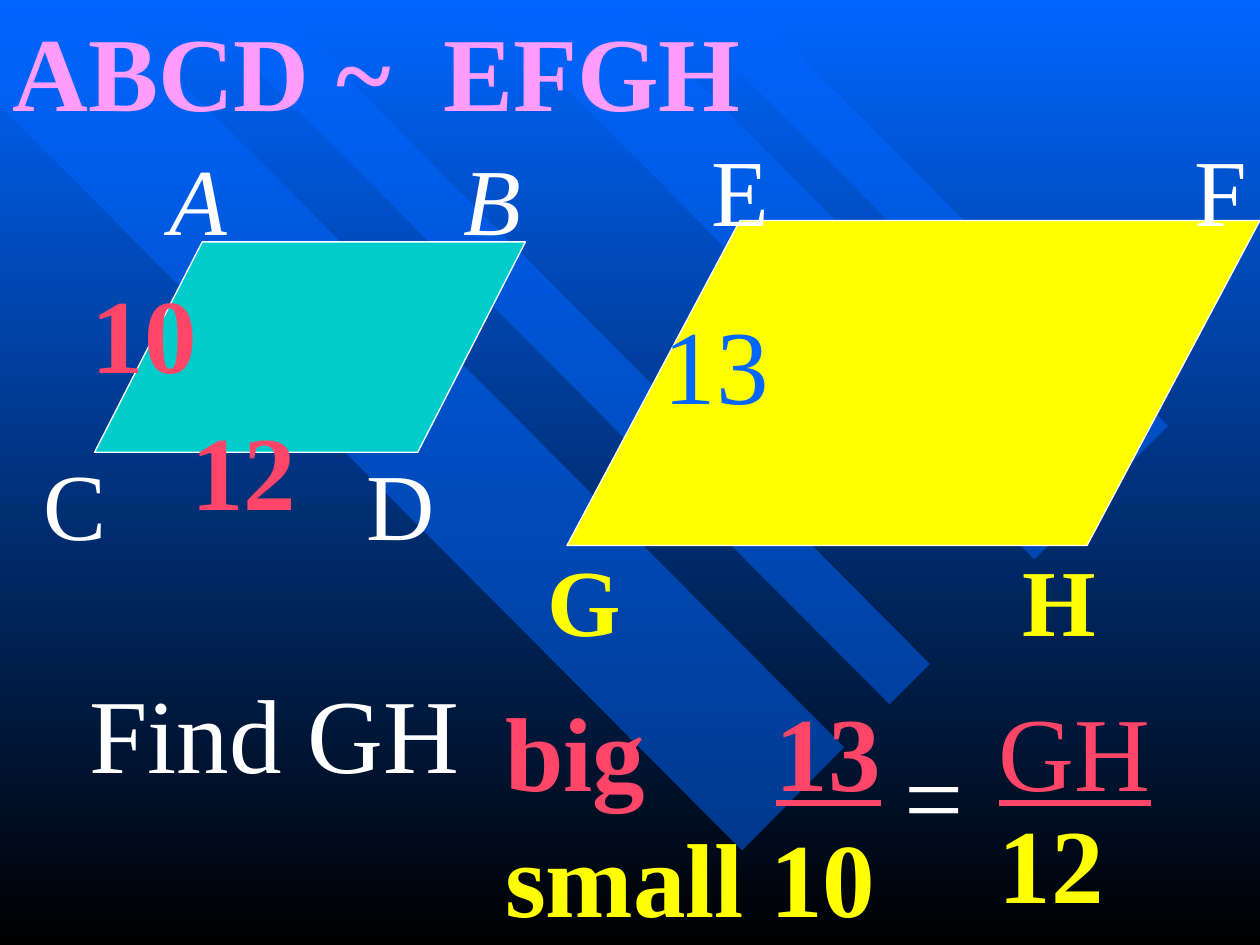
from lxml import etree
from pptx import Presentation
from pptx.dml.color import RGBColor
from pptx.enum.shapes import MSO_SHAPE
from pptx.enum.text import MSO_AUTO_SIZE
from pptx.oxml.ns import qn
from pptx.util import Inches, Pt

PARALLELOGRAM = MSO_SHAPE.PARALLELOGRAM
GROW = MSO_AUTO_SIZE.SHAPE_TO_FIT_TEXT

FONT = "Times New Roman"
WHITE, YELLOW, TEAL = "FFFFFF", "FFFF00", "00CCCC"
BLUE, BLACK, PINK, RED = "0066FF", "000000", "FF9CFC", "FF4568"

BANDS = [
    [(6.7, 5.93), (0.79, 0), (0, 0), (0, 0.84), (5.89, 6.75)],
    [(2.14, 0), (7.38, 5.27), (7.06, 5.59), (1.49, 0)],
    [(4.89, 0), (8.76, 3.89), (8.21, 4.44), (3.8, 0)],
    [(5.3, 0), (8.97, 3.68), (9.27, 3.38), (5.91, 0)],
]


def rgb(value):
    return RGBColor.from_string(value)


def add_tab(p, inches):
    tabs = etree.SubElement(p._p.get_or_add_pPr(), qn("a:tabLst"))
    etree.SubElement(tabs, qn("a:tab"), pos=str(Inches(inches)), algn="l")


def add_text(s, box, lines, size=60, tab=None):
    sp = s.shapes.add_textbox(*map(Inches, box))
    tf = sp.text_frame
    tf.word_wrap = False
    tf.auto_size = GROW
    for i, runs in enumerate(lines):
        p = tf.paragraphs[0] if i == 0 else tf.add_paragraph()
        if tab and "\t" in runs[0][0]:
            add_tab(p, tab)
        for text, color, style in runs:
            r = p.add_run()
            r.text = text
            r.font.name = FONT
            r.font.size = Pt(size)
            r.font.color.rgb = rgb(color)
            r.font.bold = "b" in style
            r.font.italic = "i" in style
            r.font.underline = "u" in style
    return tf


def add_label(s, box, text, color, style="", size=60, tab=None):
    return add_text(s, box, [[(text, color, style)]], size, tab)


def add_background(s):
    fill = s.background.fill
    fill.gradient()
    fill.gradient_angle = 270
    for stop, color, position in zip(fill.gradient_stops, (BLUE, BLACK), (0, 1)):
        stop.color.rgb = rgb(color)
        stop.position = position
    for points in BANDS:
        start, *rest = [(Inches(x), Inches(y)) for x, y in points]
        builder = s.shapes.build_freeform(*start)
        builder.add_line_segments(rest, close=True)
        sp = builder.convert_to_shape()
        sp.shadow.inherit = False
        sp.fill.solid()
        sp.fill.fore_color.rgb = rgb(BLUE)
        sp.line.fill.background()
        color = sp._element.spPr.find(".//" + qn("a:srgbClr"))
        etree.SubElement(color, qn("a:alpha"), val="50000")


def add_figure(s, box, slant, color, vertices, sides):
    x, y, w, h = box
    sp = s.shapes.add_shape(PARALLELOGRAM, *map(Inches, box))
    sp.shadow.inherit = False
    sp.adjustments[0] = slant
    sp.fill.solid()
    sp.fill.fore_color.rgb = rgb(color)
    sp.line.color.rgb = rgb(WHITE)
    sp.line.width = Pt(0.75)
    for dx, dy, width, text, ink, style, tab in vertices:
        add_label(s, (x + dx, y + dy, width, 1), text, ink, style, 54, tab)
    for dx, dy, text, ink, style in sides:
        add_label(s, (x + dx, y + dy, 1.03, 1.1), text, ink, style)


def add_proportion(s, box):
    x, y, w, h = box
    add_text(s, (x, y, 3.22, h),
             [[("big\t", RED, "b"), ("13", RED, "bu")],
              [("small 10", YELLOW, "b")]], tab=2.15)
    add_label(s, (x + 3.17, y + 0.35, 0.67, 1.1), "=", WHITE)
    tf = add_text(s, (x + 3.92, y, 1.42, 2.02),
                  [[("GH", RED, "u")], [("12", YELLOW, "b")]])
    tf.paragraphs[1].line_spacing = 0.9


def main():
    prs = Presentation()
    prs.slide_width, prs.slide_height = Inches(10), Inches(7.5)
    s = prs.slides.add_slide(prs.slide_layouts[6])
    add_background(s)
    add_figure(s, (0.75, 1.92, 3.42, 1.67), 0.512, TEAL,
               [(0.5, -0.85, 2.99, "A\tB", WHITE, "i", 2.33),
                (-0.5, 1.57, 3.31, "C\tD", WHITE, "", 2.56)],
               [(-0.12, 0.16, "10", RED, "b"), (0.67, 1.25, "12", RED, "b")])
    add_figure(s, (4.5, 1.75, 5.5, 2.58), 0.532, YELLOW,
               [(1.05, -0.75, 4.45, "E\tF", WHITE, "", 3.83),
                (-0.25, 2.5, 4.56, "G\tH", YELLOW, "b", 3.77)],
               [(0.67, 0.58, "13", BLUE, "")])
    add_label(s, (0, 0, 5.98, 1.1), "ABCD ~\tEFGH", PINK, "b", tab=3.42)
    add_label(s, (0.61, 5.26, 3.14, 1.1), "Find GH", WHITE)
    add_proportion(s, (3.91, 5.4, 5.34, 2.12))
    prs.save("out.pptx")


if __name__ == "__main__":
    main()
